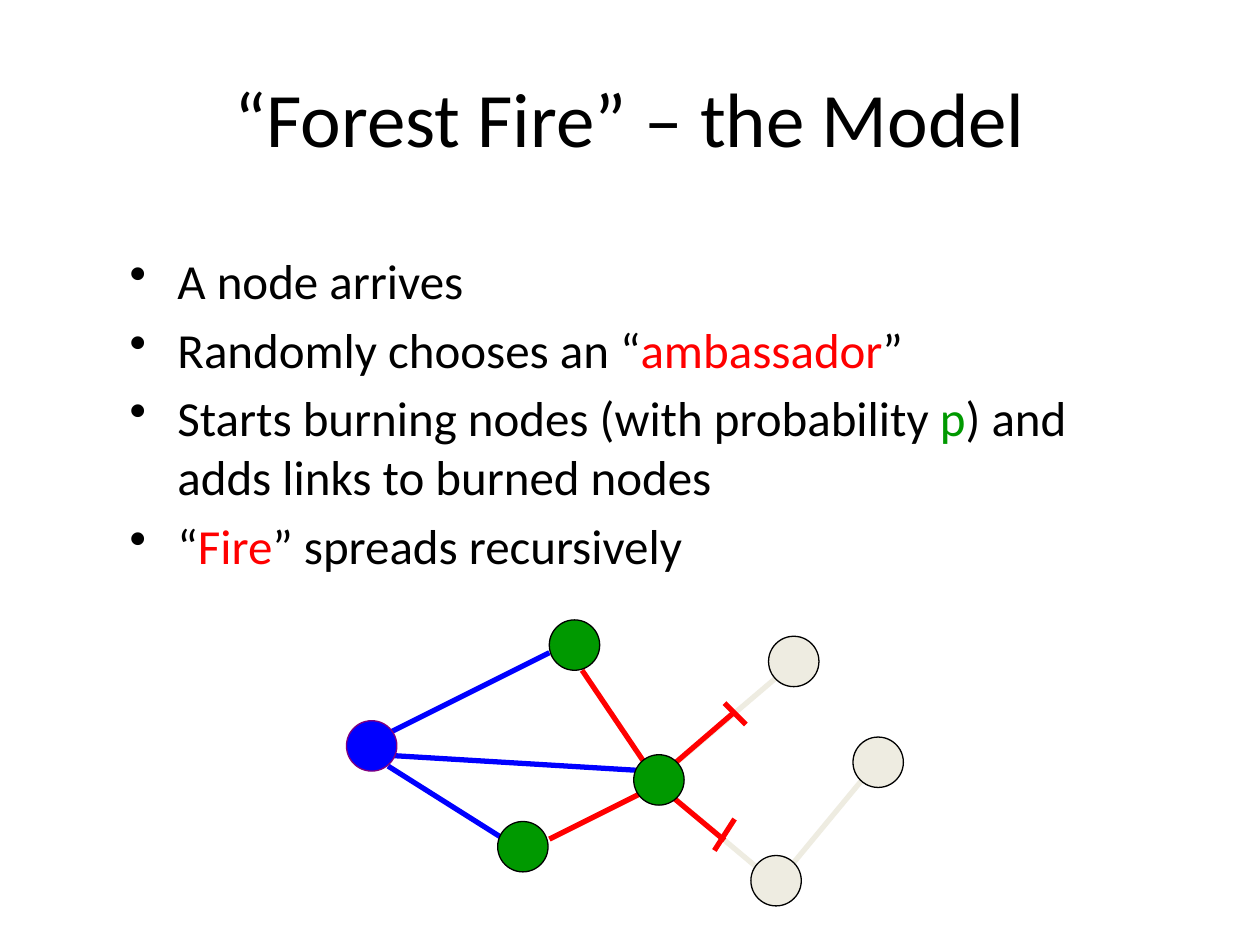
from lxml.etree import SubElement
from pptx import Presentation
from pptx.dml.color import RGBColor
from pptx.enum.shapes import MSO_CONNECTOR, MSO_SHAPE
from pptx.enum.text import MSO_ANCHOR, PP_ALIGN
from pptx.oxml.ns import qn
from pptx.util import Inches, Pt

BLACK = RGBColor(0x00, 0x00, 0x00)
RED = RGBColor(0xFF, 0x00, 0x00)
GREEN = RGBColor(0x00, 0x99, 0x00)
BLUE = RGBColor(0x00, 0x00, 0xFF)
PURPLE = RGBColor(0x80, 0x00, 0x80)
PALE = RGBColor(0xEE, 0xEC, 0xE1)

COLS, ROWS = 100, 75
NODE = 4  # node diameter in grid cells

BULLETS = [
    [("A node arrives", BLACK)],
    [("Randomly chooses an “", BLACK), ("ambassador", RED), ("”", BLACK)],
    [("Starts burning nodes (with probability ", BLACK), ("p", GREEN),
     (") and adds links to burned nodes", BLACK)],
    [("“", BLACK), ("Fire", RED), ("” spreads recursively", BLACK)],
]

# start column, start row, end column, end row
UNBURNT = [
    (52.5, 62.5, 60.5, 69.2),
    (62.3, 53.2, 52.9, 61.2),
    (69, 61.2, 62.3, 69.3),
]
SPREAD = [
    (46.2, 53.2, 51.6, 61.2),
    (43.6, 66.6, 51.6, 62.6),
    (52.7, 62.7, 57.5, 66.7),
]
LINKS = [
    (30.8, 60.8, 40, 66.6),
    (30, 59.9, 51.6, 61.2),
    (30.2, 58.5, 43.6, 51.8),
]
STOPS = [(57.5, 55.8, 59.2, 57.5), (58.3, 65, 56.7, 67.5)]

# left column, top row
UNTOUCHED = [(67.7, 58.5), (59.6, 67.9), (61, 50.5)]
BURNED = [(43.6, 49.2), (50.3, 59.9), (39.5, 65.2)]
ARRIVAL = (27.5, 57.2)


class Sketch:
    """Draws on one slide, with lengths in grid columns and rows."""

    font = "Calibri"

    def __init__(self, deck):
        self.slide = deck.slides.add_slide(deck.slide_layouts[6])
        self.shapes = self.slide.shapes
        self.col = deck.slide_width / COLS
        self.row = deck.slide_height / ROWS

    def spot(self, *cells):
        """Turn alternating columns and rows into slide lengths."""
        units = (self.col, self.row)
        return [round(cell * units[i % 2]) for i, cell in enumerate(cells)]

    def frame(self, box):
        frame = self.shapes.add_textbox(*self.spot(*box)).text_frame
        frame.word_wrap = True
        return frame

    def fill(self, para, runs, size):
        para.font.name = self.font
        para.font.size = Pt(size)
        for text, color in runs:
            run = para.add_run()
            run.text = text
            run.font.color.rgb = color

    def title(self, box, text):
        frame = self.frame(box)
        frame.vertical_anchor = MSO_ANCHOR.MIDDLE
        para = frame.paragraphs[0]
        para.alignment = PP_ALIGN.CENTER
        self.fill(para, [(text, BLACK)], 44)

    def bullets(self, box, items, size=28):
        frame = self.frame(box)
        for i, runs in enumerate(items):
            para = frame.add_paragraph() if i else frame.paragraphs[0]
            para.space_before = Pt(size * 0.2)
            self.fill(para, runs, size)
            props = para._p.get_or_add_pPr()
            indent = Inches(0.38)
            props.set("marL", str(indent))
            props.set("indent", str(-indent))
            mark = props.makeelement(qn("a:buChar"), {"char": "•"})
            props.find(qn("a:defRPr")).addprevious(mark)

    def edge(self, ends, color, tail=None):
        edge = self.shapes.add_connector(MSO_CONNECTOR.STRAIGHT, *self.spot(*ends))
        edge.line.color.rgb = color
        edge.line.width = Pt(3)
        if tail:
            SubElement(edge.line._get_or_add_ln(), qn("a:tailEnd"), type=tail)
        SubElement(edge._element.spPr, qn("a:effectLst"))

    def edges(self, group, color):
        for ends in group:
            self.edge(ends, color)

    def node(self, place, color, rim=BLACK):
        node = self.shapes.add_shape(MSO_SHAPE.OVAL, *self.spot(*place, NODE, NODE))
        node.shadow.inherit = False
        node.fill.solid()
        node.fill.fore_color.rgb = color
        node.line.color.rgb = rim
        node.line.width = Pt(0.75)


def main():
    deck = Presentation()
    deck.slide_width, deck.slide_height = Inches(10), Inches(7.5)
    sketch = Sketch(deck)

    sketch.title((5, 3, 90, 12.5), "“Forest Fire” – the Model")
    sketch.bullets((9.3, 19.4, 84.2, 33.6), BULLETS)

    sketch.edges(UNBURNT, PALE)
    sketch.edge((58.3, 56.5, 53.3, 60.8), RED, tail="diamond")
    sketch.edges(SPREAD, RED)
    sketch.edges(LINKS, BLUE)

    for place in UNTOUCHED:
        sketch.node(place, PALE)
    sketch.node(ARRIVAL, BLUE, PURPLE)
    for place in BURNED:
        sketch.node(place, GREEN)
    sketch.edges(STOPS, RED)

    deck.save("out.pptx")


if __name__ == "__main__":
    main()
